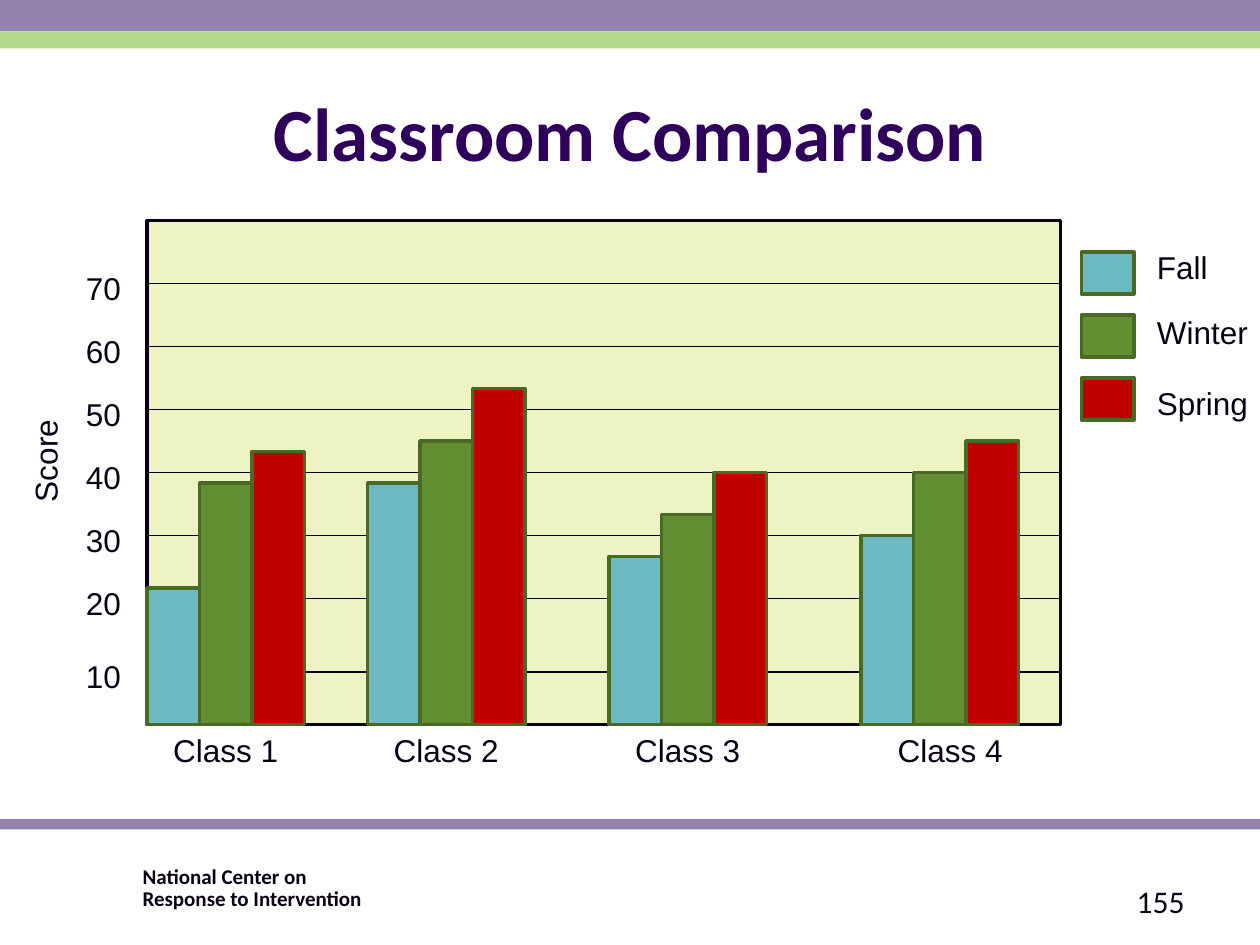
from pptx import Presentation
from pptx.dml.color import RGBColor
from pptx.enum.shapes import MSO_CONNECTOR, MSO_SHAPE
from pptx.enum.text import MSO_ANCHOR as Anchor, PP_ALIGN as Align
from pptx.oxml.ns import qn
from pptx.util import Inches, Pt
from lxml.etree import SubElement

INK = RGBColor(0x0A, 0x00, 0x14)
TITLE = RGBColor(0x2E, 0x00, 0x5C)
PURPLE = RGBColor(0x92, 0x84, 0xAC)
LIGHT_GREEN = RGBColor(0xB4, 0xD8, 0x8B)
CREAM = RGBColor(0xEE, 0xF3, 0xC3)
BAR_EDGE = RGBColor(0x49, 0x6A, 0x24)
TEAL = RGBColor(0x6D, 0xB9, 0xC1)
GREEN = RGBColor(0x62, 0x8F, 0x31)
RED = RGBColor(0xC0, 0x00, 0x00)

# The slide is a grid of 120 columns by 90 rows, 12 to the inch
COLUMNS, ROWS = 120, 90
BAR_WIDTH = 5
LABEL_HEIGHT = 4.8

SEASONS = [("Fall", TEAL), ("Winter", GREEN), ("Spring", RED)]
# Class name: column of the first bar, column of the label, bar heights in rows
CLASSES = {
    "Class 1": (0, -1, (13, 23, 26)),
    "Class 2": (21, 20, (23, 27, 32)),
    "Class 3": (44, 43, (16, 20, 24)),
    "Class 4": (68, 68, (18, 24, 27)),
}
# Score: row of its gridline below the top of the plot
GRIDLINES = {70: 6, 60: 12, 50: 18, 40: 24, 30: 30, 20: 36, 10: 43}


def grid(units):
    return Inches(units / 12)


def add_rectangle(slide, box, fill, edge=None):
    shape = slide.shapes.add_shape(MSO_SHAPE.RECTANGLE, *map(grid, box))
    shape.shadow.inherit = False
    shape.fill.solid()
    shape.fill.fore_color.rgb = fill
    if edge is None:
        shape.line.fill.background()
    else:
        shape.line.color.rgb = edge
        shape.line.width = Pt(2)
    return shape


def add_text(slide, box, lines, size=18, font="Arial", color=INK, bold=False,
             align=Align.LEFT, anchor=Anchor.TOP):
    shape = slide.shapes.add_textbox(*map(grid, box))
    frame = shape.text_frame
    frame.word_wrap = True
    frame.vertical_anchor = anchor
    paragraph = frame.paragraphs[0]
    paragraph.alignment = align
    for index, line in enumerate(lines):
        if index:
            paragraph.add_line_break()
        run = paragraph.add_run()
        run.text = line
        run.font.size = Pt(size)
        run.font.name = font
        run.font.bold = bold
        run.font.color.rgb = color
    return shape


def add_gridline(slide, plot, left, right, row):
    line = slide.shapes.add_connector(
        MSO_CONNECTOR.STRAIGHT, grid(left), grid(row), grid(right), grid(row))
    line.line.color.rgb = INK
    line.line.width = Pt(0.75)
    SubElement(line._element.spPr, qn("a:effectLst"))
    if grid(row) == plot.top + plot.height // 2:
        line.begin_connect(plot, 1)
        line.end_connect(plot, 3)


def add_header(slide, box):
    left, top, width, height = box
    add_rectangle(slide, (left, top, width, 3), PURPLE)
    add_rectangle(slide, (left, top + 3, width, 1.6), LIGHT_GREEN)
    add_text(slide, (left + 6, top + 7, width - 12, height - 7),
             ["Classroom Comparison"], 42.9, "Calibri", TITLE, True,
             Align.CENTER, Anchor.MIDDLE)


def add_bar_plot(slide, box):
    left, top, width, height = box
    bottom = top + height
    plot = add_rectangle(slide, box, CREAM, INK)

    # Gridlines and score labels
    for score, offset in GRIDLINES.items():
        row = top + offset
        add_gridline(slide, plot, left, left + width, row)
        add_text(slide, (left - 7, row - 2, 6, LABEL_HEIGHT), [str(score)])

    # Bars and class labels
    for name, (bar_column, label_column, heights) in CLASSES.items():
        for index, (bar_height, (_, color)) in enumerate(zip(heights, SEASONS)):
            bar_left = left + bar_column + index * BAR_WIDTH
            add_rectangle(slide, (bar_left, bottom - bar_height, BAR_WIDTH, bar_height),
                          color, BAR_EDGE)
        add_text(slide, (left + label_column, bottom, 17, LABEL_HEIGHT), [name],
                 align=Align.CENTER)

    # Axis title
    axis_title = add_text(slide, (left - 15.7, top + 19.6, 12, LABEL_HEIGHT), ["Score"])
    axis_title.rotation = 270


def add_legend(slide, box):
    left, top, width, height = box
    step = height / len(SEASONS)
    label_offsets = (-1, -0.8, 0)
    for index, ((season, color), offset) in enumerate(zip(SEASONS, label_offsets)):
        row = top + index * step
        add_rectangle(slide, (left, row, BAR_WIDTH, 4), color, BAR_EDGE)
        label = add_text(slide, (left + 6, row + offset, width - 6, LABEL_HEIGHT),
                         [season])
        # The labels need the full width up to the slide's edge
        label.text_frame.margin_right = 0


def add_footer(slide, box):
    left, top, width, height = box
    add_rectangle(slide, (left, top, width, 1), PURPLE)
    center_name = add_text(slide, (left + 13.1, top + 4, 38.9, 3.6),
                           ["National Center on ", "Response to Intervention"],
                           12, "Calibri", bold=True)
    frame = center_name.text_frame
    frame.margin_left = frame.margin_right = Inches(0.04)
    frame.margin_top = frame.margin_bottom = Inches(0.04)
    frame.paragraphs[0].line_spacing = 0.9
    add_text(slide, (left + 86, top + 5.4, 28, LABEL_HEIGHT), ["155"],
             font="Calibri", align=Align.RIGHT, anchor=Anchor.MIDDLE)


def main():
    presentation = Presentation()
    presentation.slide_width = grid(COLUMNS)
    presentation.slide_height = grid(ROWS)
    slide = presentation.slides.add_slide(presentation.slide_layouts[6])
    add_header(slide, (0, 0, COLUMNS, 18))
    add_bar_plot(slide, (14, 21, 87, 48))
    add_legend(slide, (103, 24, 17, 18))
    add_footer(slide, (0, 78, COLUMNS, 12))
    presentation.save("out.pptx")


if __name__ == "__main__":
    main()
